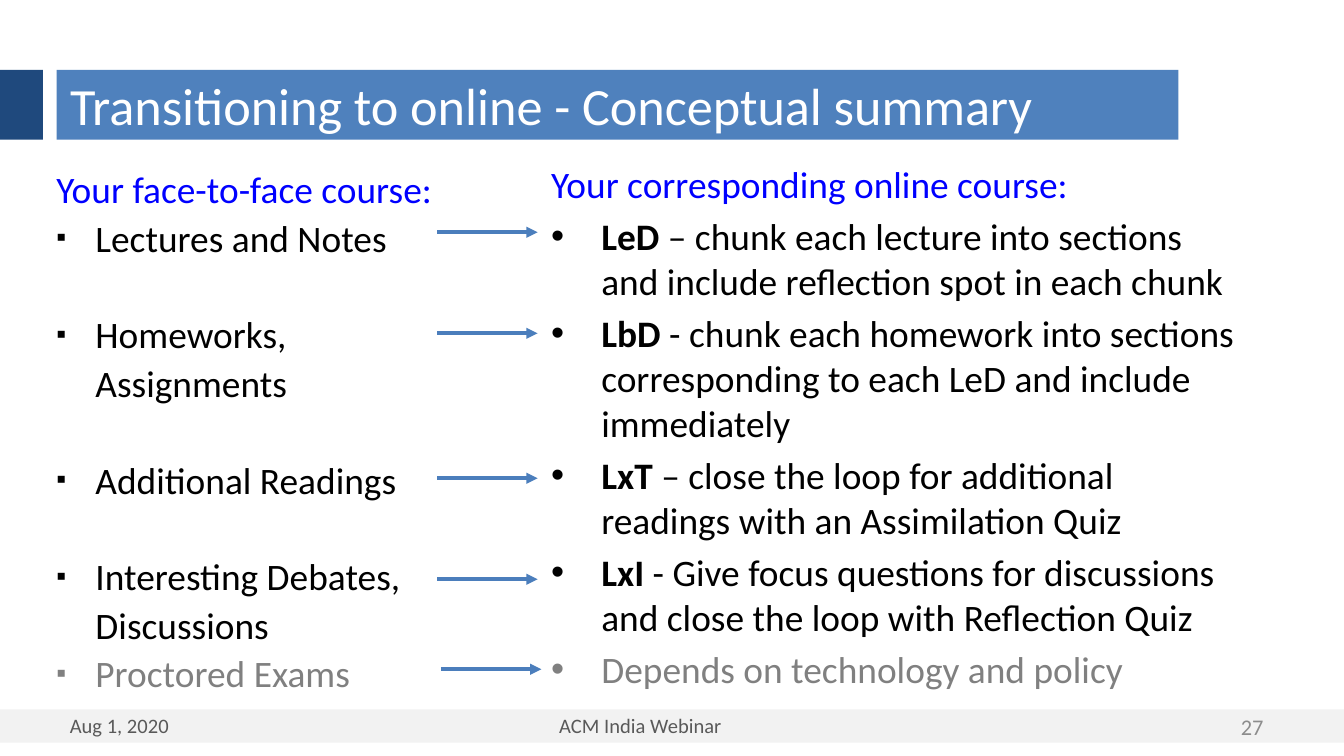
from dataclasses import dataclass

from lxml import etree
from pptx import Presentation
from pptx.dml.color import RGBColor
from pptx.enum.shapes import MSO_CONNECTOR, MSO_SHAPE
from pptx.enum.text import MSO_ANCHOR, MSO_AUTO_SIZE, PP_ALIGN
from pptx.oxml.ns import qn
from pptx.util import Cm, Pt

RECTANGLE = MSO_SHAPE.RECTANGLE
STRAIGHT = MSO_CONNECTOR.STRAIGHT
TOP, MIDDLE = MSO_ANCHOR.TOP, MSO_ANCHOR.MIDDLE
LEFT, CENTER, RIGHT = PP_ALIGN.LEFT, PP_ALIGN.CENTER, PP_ALIGN.RIGHT
NO_AUTOFIT = MSO_AUTO_SIZE.NONE

FONT = "Calibri"
BLACK = RGBColor(0x00, 0x00, 0x00)
WHITE = RGBColor(0xFF, 0xFF, 0xFF)
BLUE = RGBColor(0x00, 0x00, 0xFF)
GRAY = RGBColor(0x80, 0x80, 0x80)
FOOTER_GRAY = RGBColor(0x59, 0x59, 0x59)
NUMBER_GRAY = RGBColor(0x8C, 0x8C, 0x8C)
BAND_GRAY = RGBColor(0xF2, 0xF2, 0xF2)
TITLE_BLUE = RGBColor(0x4F, 0x81, 0xBD)
ACCENT_NAVY = RGBColor(0x1F, 0x49, 0x7D)
ARROW_BLUE = RGBColor(0x4B, 0x7E, 0xBC)

ARROW_LENGTH = 1.9


@dataclass(frozen=True)
class Box:
    left: float
    top: float
    width: float
    height: float

    def lengths(self):
        return Cm(self.left), Cm(self.top), Cm(self.width), Cm(self.height)


@dataclass(frozen=True)
class Item:
    text: str
    term: str = ""
    color: RGBColor = BLACK
    space_after: float = 0


@dataclass(frozen=True)
class Column:
    box: Box
    heading: str
    items: tuple[Item, ...]
    bullet: str
    bullet_percent: int
    indent: float
    line_spacing: float
    space_before: float


@dataclass(frozen=True)
class Label:
    box: Box
    text: str
    size: float
    color: RGBColor
    alignment: PP_ALIGN
    anchor: MSO_ANCHOR = TOP


@dataclass(frozen=True)
class Arrow:
    left: float
    top: float


COLUMNS = (
    Column(
        Box(0.81, 2.95, 8.28, 9.42),
        "Your face-to-face course:",
        (
            Item("Lectures and Notes", space_after=26),
            Item("Homeworks, Assignments", space_after=26),
            Item("Additional Readings", space_after=26),
            Item("Interesting Debates, Discussions"),
            Item("Proctored Exams", color=GRAY),
        ),
        "▪", 75, 0.74, 1.08, 0,
    ),
    Column(
        Box(10.16, 2.92, 13.54, 9.42),
        "Your corresponding online course:",
        (
            Item(" – chunk each lecture into sections and include reflection spot in each chunk", "LeD"),
            Item(" - chunk each homework into sections corresponding to each LeD and include immediately", "LbD"),
            Item(" – close the loop for additional readings with an Assimilation Quiz", "LxT"),
            Item(" - Give focus questions for discussions and close the loop with Reflection Quiz", "LxI"),
            Item("Depends on technology and policy", color=GRAY),
        ),
        "•", 100, 0.95, 1.0, 4,
    ),
)

LABELS = (
    Label(Box(1.07, 13.36, 3.61, 0.61), "Aug 1, 2020", 11, FOOTER_GRAY, LEFT),
    Label(Box(6.15, 13.36, 11.91, 0.61), "ACM India Webinar", 11, FOOTER_GRAY, CENTER),
    Label(Box(22.56, 13.36, 1.57, 0.76), "27", 12, NUMBER_GRAY, RIGHT, MIDDLE),
)

ARROWS = (
    Arrow(8.26, 4.39),
    Arrow(8.26, 6.3),
    Arrow(8.26, 9.04),
    Arrow(8.26, 10.95),
    Arrow(8.33, 12.65),
)


def place(shape, box: Box) -> None:
    shape.left, shape.top, shape.width, shape.height = box.lengths()


def set_font(target, size: float, color: RGBColor) -> None:
    target.font.name = FONT
    target.font.size = Pt(size)
    target.font.color.rgb = color


def set_bullet(paragraph, column: Column) -> None:
    properties = paragraph._p.get_or_add_pPr()
    properties.set("marL", str(Cm(column.indent)))
    properties.set("indent", str(-Cm(column.indent)))
    etree.SubElement(properties, qn("a:buSzPct"), val=str(column.bullet_percent * 1000))
    etree.SubElement(properties, qn("a:buFont"), typeface="Arial")
    etree.SubElement(properties, qn("a:buChar"), char=column.bullet)


def clear_bullet(paragraph) -> None:
    properties = paragraph._p.get_or_add_pPr()
    properties.set("marL", "0")
    properties.set("indent", "0")
    etree.SubElement(properties, qn("a:buNone"))


def draw_band(slide, box: Box, color: RGBColor) -> None:
    shape = slide.shapes.add_shape(RECTANGLE, *box.lengths())
    shape.shadow.inherit = False
    shape.fill.solid()
    shape.fill.fore_color.rgb = color
    shape.line.fill.background()


def draw_title(slide, text: str) -> None:
    title = slide.shapes.title
    place(title, Box(1.07, 1.32, 21.2, 1.32))
    title.fill.solid()
    title.fill.fore_color.rgb = TITLE_BLUE
    frame = title.text_frame
    frame.text = text
    frame.auto_size = NO_AUTOFIT
    frame.vertical_anchor = MIDDLE
    paragraph = frame.paragraphs[0]
    paragraph.alignment = LEFT
    set_font(paragraph.runs[0], 28, WHITE)


def draw_column(placeholder, column: Column) -> None:
    place(placeholder, column.box)
    frame = placeholder.text_frame
    frame.auto_size = NO_AUTOFIT
    frame.text = column.heading
    heading = frame.paragraphs[0]
    clear_bullet(heading)
    heading.line_spacing = column.line_spacing
    heading.space_before = Pt(0)
    set_font(heading.runs[0], 20, BLUE)
    for item in column.items:
        paragraph = frame.add_paragraph()
        set_bullet(paragraph, column)
        paragraph.line_spacing = column.line_spacing
        paragraph.space_before = Pt(column.space_before)
        paragraph.space_after = Pt(item.space_after)
        for text, bold in ((item.term, True), (item.text, False)):
            if text:
                run = paragraph.add_run()
                run.text = text
                set_font(run, 20, item.color)
                run.font.bold = bold


def draw_label(slide, label: Label) -> None:
    frame = slide.shapes.add_textbox(*label.box.lengths()).text_frame
    frame.word_wrap = True
    frame.vertical_anchor = label.anchor
    frame.text = label.text
    paragraph = frame.paragraphs[0]
    paragraph.alignment = label.alignment
    set_font(paragraph.runs[0], label.size, label.color)


def draw_arrow(slide, arrow: Arrow) -> None:
    connector = slide.shapes.add_connector(
        STRAIGHT, Cm(arrow.left), Cm(arrow.top), Cm(arrow.left + ARROW_LENGTH), Cm(arrow.top)
    )
    connector.line.color.rgb = ARROW_BLUE
    connector.line.width = Pt(2)
    etree.SubElement(connector.line._get_or_add_ln(), qn("a:tailEnd"), type="triangle")
    etree.SubElement(connector._element.spPr, qn("a:effectLst"))


def main() -> None:
    presentation = Presentation()
    presentation.slide_width, presentation.slide_height = Cm(25.4), Cm(14.29)
    slide = presentation.slides.add_slide(presentation.slide_layouts[3])
    draw_band(slide, Box(0, 13.41, 25.4, 0.63), BAND_GRAY)
    draw_band(slide, Box(0, 1.32, 0.81, 1.32), ACCENT_NAVY)
    draw_title(slide, "Transitioning to online - Conceptual summary")
    for index, column in enumerate(COLUMNS, start=1):
        draw_column(slide.placeholders[index], column)
    for label in LABELS:
        draw_label(slide, label)
    for arrow in ARROWS:
        draw_arrow(slide, arrow)
    presentation.save("out.pptx")


if __name__ == "__main__":
    main()
